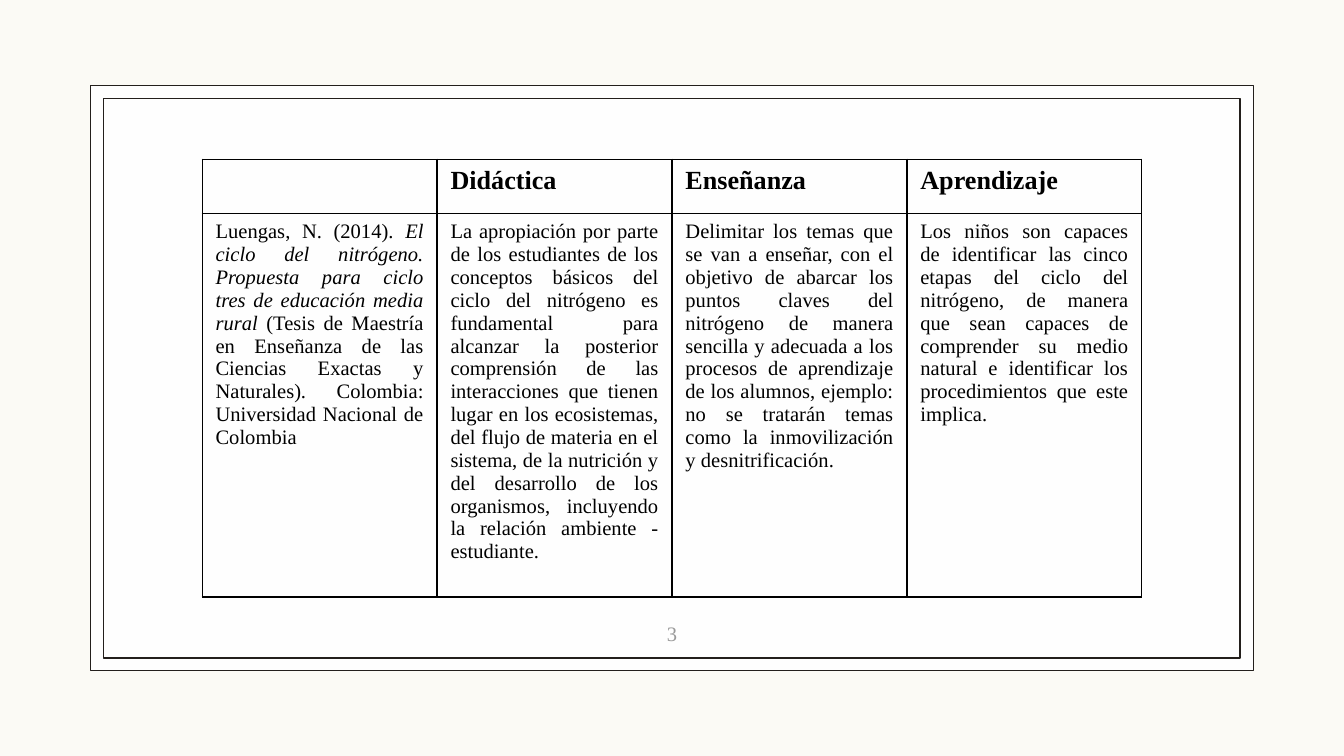
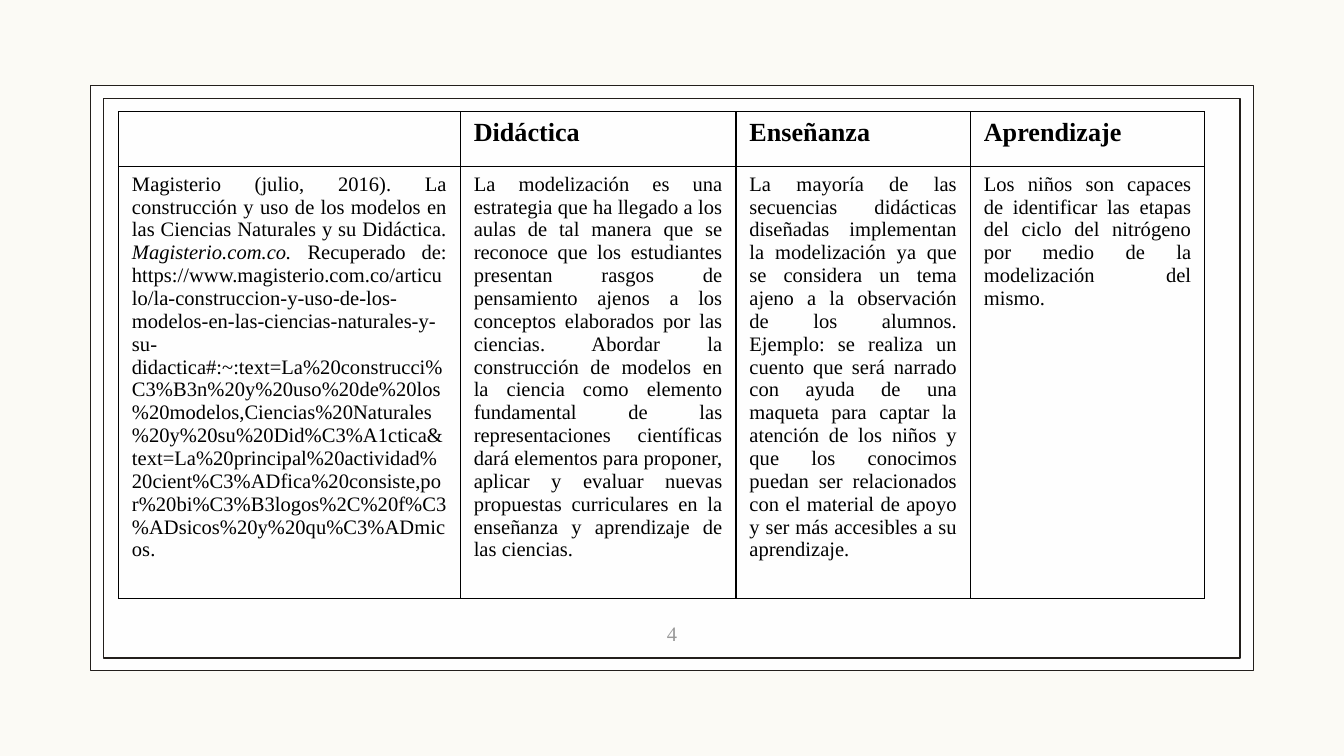
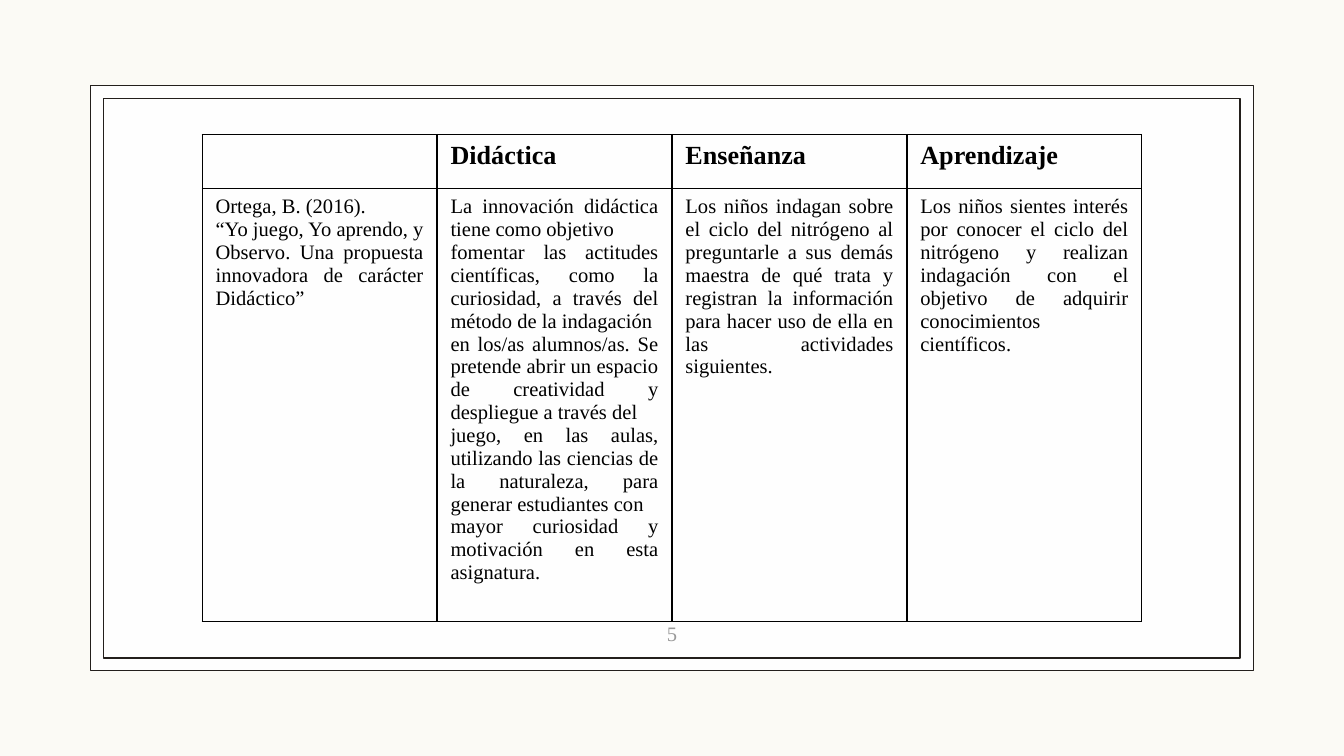
import lxml.etree
import pptx
import pptx.dml.color
import pptx.enum.shapes
import pptx.enum.text
import pptx.oxml
import pptx.oxml.ns
import pptx.util

Cm = pptx.util.Cm
Pt = pptx.util.Pt
qn = pptx.oxml.ns.qn
ALIGN = pptx.enum.text.PP_ALIGN

COLOURS = {
    "paper": "FBFAF5",
    "panel": "FFFFFF",
    "frame": "231F1C",
    "text": "000000",
    "number": "999999",
}
FONT = "Times New Roman"
HEADER_STYLE = {"name": FONT, "size": Pt(14), "bold": True, "italic": False}
BODY_STYLE = {"name": FONT, "size": Pt(11), "bold": False, "italic": False}

PAGE_WIDTH = 25.4
PAGE_HEIGHT = 14.29
LINE_WIDTH = Pt(0.75)
HEADER_HEIGHT = 1.03
HEADERS = ["", "Didáctica", "Enseñanza", "Aprendizaje"]
EQUAL_COLUMNS = [4.44] * len(HEADERS)
EQUAL_LEFT = (PAGE_WIDTH - sum(EQUAL_COLUMNS)) / 2

# In the cells below, "|" switches italics on and off.
TABLES = [
    {
        "number": 3,
        "left": EQUAL_LEFT,
        "top": 3.01,
        "columns": EQUAL_COLUMNS,
        "body_height": 6.74,
        "cells": [
            "Luengas, N. (2014). |El ciclo del nitrógeno. Propuesta para ciclo tres de "
            "educación media rural |(Tesis de Maestría en Enseñanza de las Ciencias "
            "Exactas y Naturales)|. |Colombia: Universidad Nacional de Colombia",
            "La apropiación por parte de los estudiantes de los conceptos básicos del "
            "ciclo del nitrógeno es fundamental para alcanzar la posterior comprensión "
            "de las interacciones que tienen lugar en los ecosistemas, del flujo de "
            "materia en el sistema, de la nutrición y del desarrollo de los organismos, "
            "incluyendo la relación ambiente - estudiante.",
            "Delimitar los temas que se van a enseñar, con el objetivo de abarcar los "
            "puntos claves del nitrógeno de manera sencilla y adecuada a los procesos "
            "de aprendizaje de los alumnos, ejemplo: no se tratarán temas como la "
            "inmovilización y desnitrificación.",
            "Los niños son capaces de identificar las cinco etapas del ciclo del "
            "nitrógeno, de manera que sean capaces de comprender su medio natural e "
            "identificar los procedimientos que este implica.",
        ],
    },
    {
        "number": 4,
        "left": 2.24,
        "top": 2.11,
        "columns": [6.46, 5.21, 4.43, 4.43],
        "body_height": 7.6,
        "cells": [
            "Magisterio (julio, 2016). La construcción y uso de los modelos en las "
            "Ciencias Naturales y su Didáctica. |Magisterio.com.co. |Recuperado de: "
            "https://www.magisterio.com.co/articulo/la-construccion-y-uso-de-los-"
            "modelos-en-las-ciencias-naturales-y-su-didactica#:~:text=La%20"
            "construcci%C3%B3n%20y%20uso%20de%20los%20modelos,Ciencias%20Naturales"
            "%20y%20su%20Did%C3%A1ctica&text=La%20principal%20actividad%20"
            "cient%C3%ADfica%20consiste,por%20bi%C3%B3logos%2C%20f%C3%ADsicos"
            "%20y%20qu%C3%ADmicos.",
            "La modelización es una estrategia que ha llegado a los aulas de tal manera "
            "que se reconoce que los estudiantes presentan rasgos de pensamiento ajenos "
            "a los conceptos elaborados por las ciencias. Abordar la construcción de "
            "modelos en la ciencia como elemento fundamental de las representaciones "
            "científicas dará elementos para proponer, aplicar y evaluar nuevas "
            "propuestas curriculares en la enseñanza y aprendizaje de las ciencias.",
            "La mayoría de las secuencias didácticas diseñadas implementan la "
            "modelización ya que se considera un tema ajeno a la observación de los "
            "alumnos. Ejemplo: se realiza un cuento que será narrado con ayuda de una "
            "maqueta para captar la atención de los niños y que los conocimos puedan "
            "ser relacionados con el material de apoyo y ser más accesibles a su "
            "aprendizaje.",
            "Los niños son capaces de identificar las etapas del ciclo del nitrógeno "
            "por medio de la modelización del mismo.",
        ],
    },
    {
        "number": 5,
        "left": EQUAL_LEFT,
        "top": 2.54,
        "columns": EQUAL_COLUMNS,
        "body_height": 7.6,
        "cells": [
            "Ortega, B. (2016).\n“Yo juego, Yo aprendo, y Observo. Una propuesta "
            "innovadora de carácter Didáctico”",
            "La innovación didáctica tiene como objetivo\n"
            "fomentar las actitudes científicas, como la curiosidad, a través del "
            "método de la indagación\n"
            "en los/as alumnos/as. Se pretende abrir un espacio de creatividad y "
            "despliegue a través del\n"
            "juego, en las aulas, utilizando las ciencias de la naturaleza, para "
            "generar estudiantes con\n"
            "mayor curiosidad y motivación en esta asignatura.",
            "Los niños indagan sobre el ciclo del nitrógeno al preguntarle a sus demás "
            "maestra de qué trata y registran la información para hacer uso de ella en "
            "las actividades siguientes.",
            "Los niños sientes interés por conocer el ciclo del nitrógeno y realizan "
            "indagación con el objetivo de adquirir conocimientos científicos.",
        ],
    },
]


def colour(name):
    return pptx.dml.color.RGBColor.from_string(COLOURS[name])


def write_text(text_frame, text, style, colour_name, alignment):
    for index, line in enumerate(text.split("\n")):
        para = text_frame.add_paragraph() if index else text_frame.paragraphs[0]
        para.alignment = alignment
        for position, words in enumerate(line.split("|")):
            span = para.add_run()
            span.text = words
            for attribute, value in {**style, "italic": position % 2 == 1}.items():
                setattr(span.font, attribute, value)
            span.font.color.rgb = colour(colour_name)


def add_rectangle(page, left, top, width, height):
    box = page.shapes.add_shape(
        pptx.enum.shapes.MSO_SHAPE.RECTANGLE, Cm(left), Cm(top), Cm(width), Cm(height)
    )
    box.shadow.inherit = False
    box.fill.background()
    box.line.color.rgb = colour("frame")
    box.line.width = LINE_WIDTH
    return box


def add_double_frame(page):
    panel = add_rectangle(page, 1.71, 1.62, 21.98, 11.05)
    panel.fill.solid()
    panel.fill.fore_color.rgb = colour("panel")
    shade = panel.fill._xPr.find(qn("a:solidFill"))[0]
    lxml.etree.SubElement(shade, qn("a:alpha"), val="93000")
    add_rectangle(page, 1.96, 1.86, 21.48, 10.58)


def add_page_number(page, number):
    width = 1.52
    box = page.shapes.add_textbox(
        Cm((PAGE_WIDTH - width) / 2), Cm(11.51), Cm(width), Cm(0.69)
    )
    frame = box.text_frame
    frame.word_wrap = True
    for side in ("left", "top", "right", "bottom"):
        setattr(frame, f"margin_{side}", Cm(0.25))
    write_text(frame, str(number), BODY_STYLE, "number", ALIGN.CENTER)


def add_borders(cell):
    properties = cell._tc.get_or_add_tcPr()
    for edge in ("lnL", "lnR", "lnT", "lnB"):
        line = lxml.etree.SubElement(properties, qn(f"a:{edge}"), w=str(LINE_WIDTH))
        fill = lxml.etree.SubElement(line, qn("a:solidFill"))
        lxml.etree.SubElement(fill, qn("a:srgbClr"), val=COLOURS["text"])


def add_summary_table(page, content):
    columns = content["columns"]
    heights = [HEADER_HEIGHT, content["body_height"]]
    rows = [(HEADERS, HEADER_STYLE), (content["cells"], BODY_STYLE)]
    table = page.shapes.add_table(
        len(rows), len(columns), Cm(content["left"]), Cm(content["top"]),
        Cm(sum(columns)), Cm(sum(heights)),
    ).table
    table.first_row = False
    table.horz_banding = False
    for column, width in zip(table.columns, columns):
        column.width = Cm(width)
    for row, height, (texts, style) in zip(table.rows, heights, rows):
        row.height = Cm(height)
        for cell, text in zip(row.cells, texts):
            add_borders(cell)
            cell.fill.background()
            if text:
                write_text(cell.text_frame, text, style, "text", ALIGN.JUSTIFY)


def main():
    deck = pptx.Presentation()
    deck.slide_width = Cm(PAGE_WIDTH)
    deck.slide_height = Cm(PAGE_HEIGHT)
    for content in TABLES:
        page = deck.slides.add_slide(deck.slide_layouts[6])
        page.background.fill.solid()
        page.background.fill.fore_color.rgb = colour("paper")
        add_double_frame(page)
        add_page_number(page, content["number"])
        add_summary_table(page, content)
    deck.save("out.pptx")


if __name__ == "__main__":
    main()
